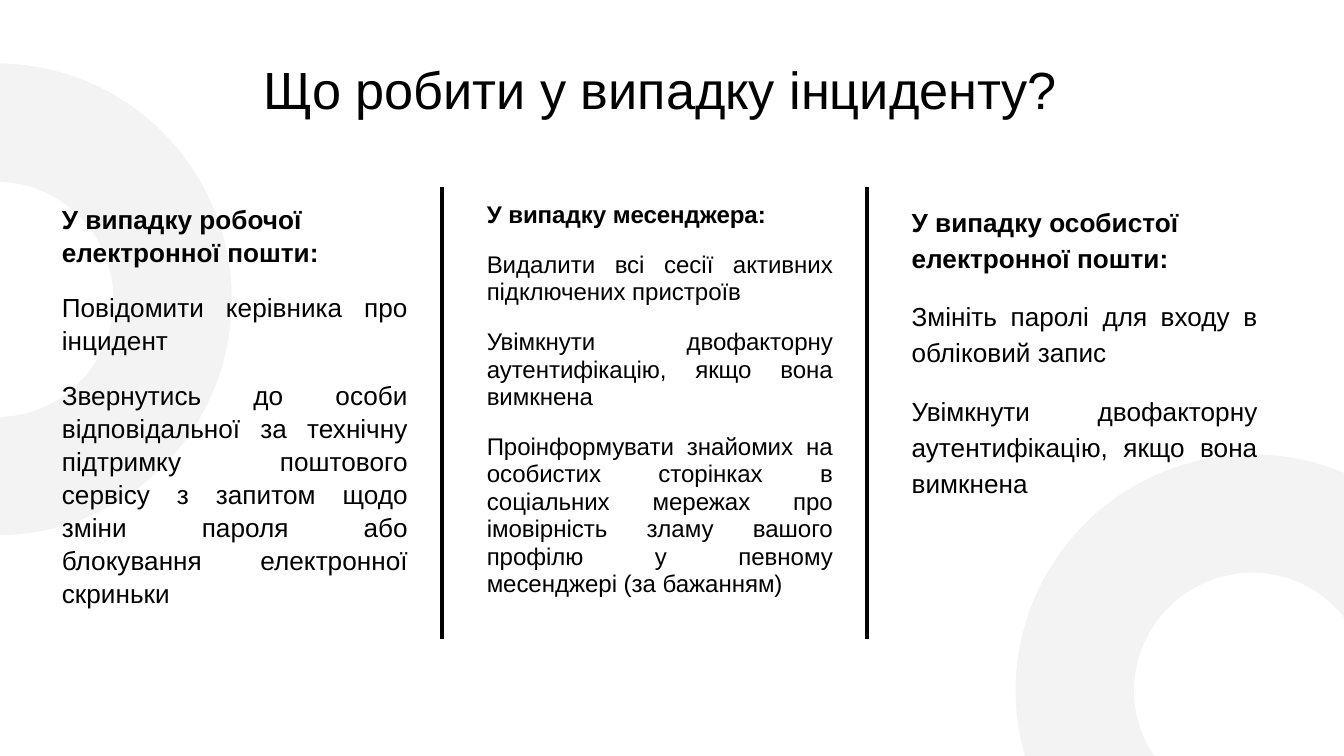
from dataclasses import dataclass

from lxml import etree
from pptx import Presentation
from pptx.dml.color import RGBColor
from pptx.enum.shapes import MSO_CONNECTOR, MSO_SHAPE
from pptx.enum.text import MSO_ANCHOR, MSO_AUTO_SIZE, PP_ALIGN
from pptx.oxml.ns import qn
from pptx.util import Cm, Pt

ARC = MSO_SHAPE.BLOCK_ARC
LINE = MSO_CONNECTOR.STRAIGHT
TOP = MSO_ANCHOR.TOP
FIXED = MSO_AUTO_SIZE.NONE
LEFT, MID, JUST = PP_ALIGN.LEFT, PP_ALIGN.CENTER, PP_ALIGN.JUSTIFY


@dataclass(frozen=True)
class Theme:
    font: str = "Arial"
    ink: RGBColor = RGBColor(0x00, 0x00, 0x00)
    pale: RGBColor = RGBColor(0xF3, 0xF3, 0xF3)
    title: float = 28
    body: float = 14
    small: float = 12.9
    gap: float = 12
    rule: float = 2.25
    edge: float = 0.75


@dataclass(frozen=True)
class Ring:
    left: float
    top: float
    turn: float


@dataclass(frozen=True)
class Column:
    head: str
    steps: tuple[str, ...]
    size: float
    space: float


THEME = Theme()
PITCH = 8.03  # column to column, in cm

RINGS = (Ring(-4.5, 1.24, 90), Ring(19.2, 8.61, 325.4))

TWO_STEP = "Увімкнути двофакторну аутентифікацію, якщо вона вимкнена"
COLUMNS = (
    Column("У випадку робочої електронної пошти:",
           ("Повідомити керівника про інцидент",
            "Звернутись до особи відповідальної за технічну підтримку поштового "
            "сервісу з запитом щодо зміни пароля або блокування електронної скриньки"),
           THEME.body, 1.05),
    Column("У випадку месенджера:",
           ("Видалити всі сесії активних підключених пристроїв",
            TWO_STEP,
            "Проінформувати знайомих на особистих сторінках в соціальних мережах про "
            "імовірність зламу вашого профілю у певному месенджері (за бажанням)"),
           THEME.small, 0.95),
    Column("У випадку особистої електронної пошти:",
           ("Змініть паролі для входу в обліковий запис", TWO_STEP),
           THEME.body, 1.15),
)


def apply(item, values: dict) -> None:
    for name, value in values.items():
        setattr(item, name, value)


def place(shape, left: float, top: float, width: float, height: float) -> None:
    apply(shape, {"left": Cm(left), "top": Cm(top),
                  "width": Cm(width), "height": Cm(height)})


def set_frame(frame) -> None:
    inset = Cm(0.25)
    apply(frame, {"word_wrap": True, "auto_size": FIXED, "vertical_anchor": TOP,
                  "margin_left": inset, "margin_right": inset,
                  "margin_top": inset, "margin_bottom": inset})


def write(para, text: str, size: float, bold: bool, form: dict) -> None:
    apply(para, form)
    run = para.add_run()
    run.text = text
    apply(run.font, {"name": THEME.font, "size": Pt(size), "bold": bold})
    run.font.color.rgb = THEME.ink


def add_ring(slide, ring: Ring) -> None:
    shape = slide.shapes.add_shape(ARC, 0, 0, 0, 0)
    place(shape, ring.left, ring.top, 8.89, 8.84)
    shape.rotation = ring.turn
    shape.shadow.inherit = False
    shape.fill.solid()
    shape.fill.fore_color.rgb = THEME.pale
    shape.line.color.rgb = THEME.pale
    shape.line.width = Pt(THEME.edge)


def add_column(slide, column: Column, left: float) -> None:
    box = slide.shapes.add_textbox(0, 0, 0, 0)
    place(box, left, 3.56, 7.04, 8.69)
    frame = box.text_frame
    set_frame(frame)
    write(frame.paragraphs[0], column.head, column.size, True,
          {"alignment": LEFT, "line_spacing": column.space})
    for step in column.steps:
        write(frame.add_paragraph(), step, column.size, False,
              {"alignment": JUST, "line_spacing": column.space,
               "space_before": Pt(THEME.gap)})
    frame.paragraphs[-1].space_after = Pt(THEME.gap)


def add_rule(slide, left: float) -> None:
    rule = slide.shapes.add_connector(LINE, Cm(left), Cm(3.53), Cm(left), Cm(12.07))
    rule.line.color.rgb = THEME.ink
    rule.line.width = Pt(THEME.rule)
    etree.SubElement(rule._element.spPr, qn("a:effectLst"))


def main() -> None:
    deck = Presentation()
    apply(deck, {"slide_width": Cm(25.4), "slide_height": Cm(14.29)})
    slide = deck.slides.add_slide(deck.slide_layouts[5])

    # Pale rings, sent behind the title
    for ring in RINGS:
        add_ring(slide, ring)

    # Title
    title = slide.shapes.title
    slide.shapes._spTree.append(title._element)
    place(title, 0.64, 0.84, 23.67, 2.03)
    set_frame(title.text_frame)
    write(title.text_frame.paragraphs[0], "Що робити у випадку інциденту?",
          THEME.title, False, {"alignment": MID})

    # Columns of advice
    for index, column in enumerate(COLUMNS):
        add_column(slide, column, 0.92 + index * PITCH)

    # Rules between the columns
    for index in range(len(COLUMNS) - 1):
        add_rule(slide, 8.36 + index * PITCH)

    deck.save("out.pptx")


if __name__ == "__main__":
    main()
